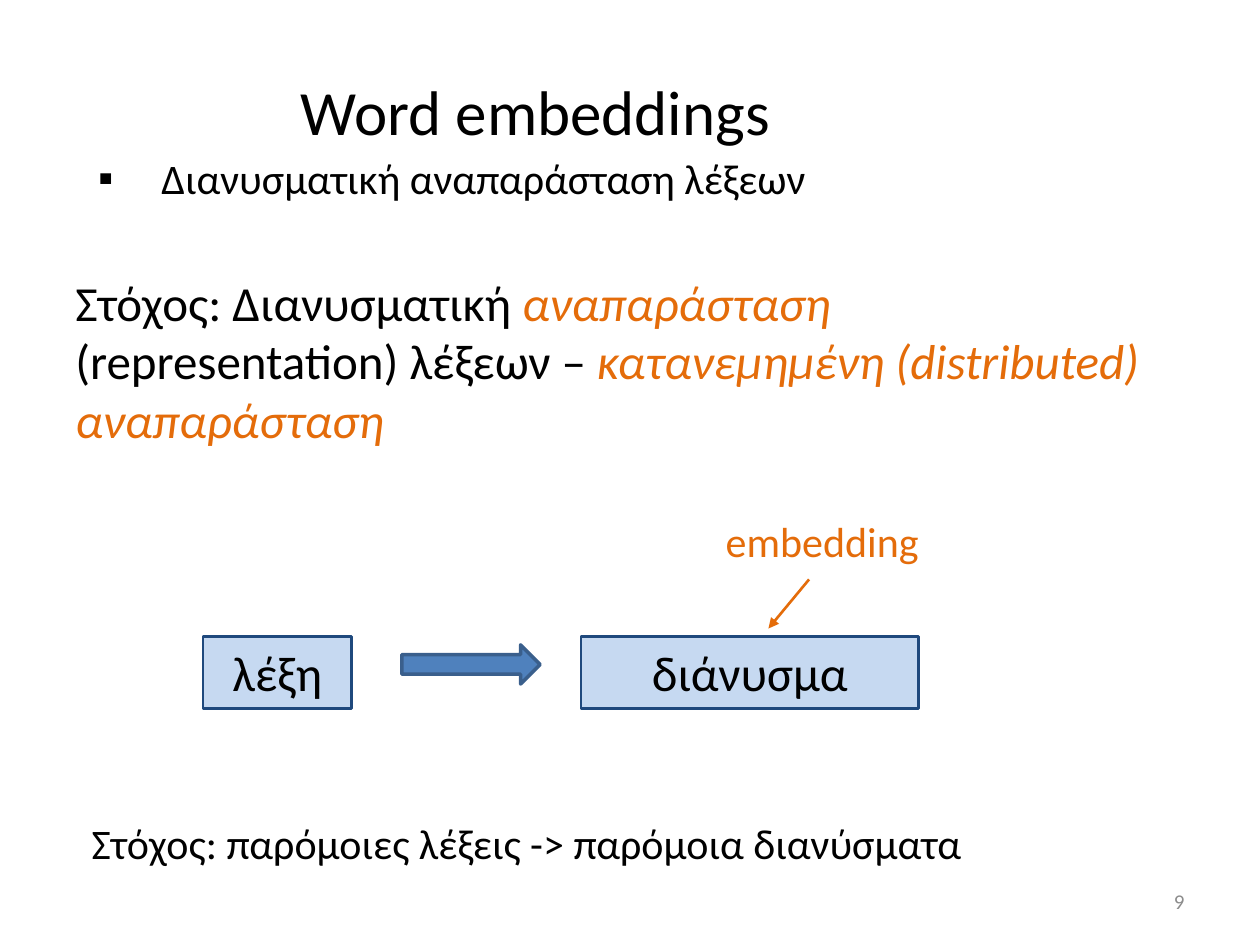
from lxml.etree import SubElement
from pptx import Presentation
from pptx.dml.color import RGBColor
from pptx.enum.shapes import MSO_CONNECTOR as Connector, MSO_SHAPE as Preset
from pptx.enum.text import MSO_ANCHOR as Anchor, MSO_AUTO_SIZE as AutoSize, PP_ALIGN as Align
from pptx.oxml.ns import qn
from pptx.util import Cm, Pt

BLACK = RGBColor(0x00, 0x00, 0x00)
ORANGE = RGBColor(0xE4, 0x6C, 0x0A)
GRAY = RGBColor(0x8C, 0x8C, 0x8C)
PALE_BLUE = RGBColor(0xC6, 0xD9, 0xF1)
NAVY = RGBColor(0x1F, 0x49, 0x7D)
BLUE = RGBColor(0x4F, 0x81, 0xBD)
STEEL = RGBColor(0x3A, 0x5F, 0x8C)


def place(shape, left, top, width, height):
    values = {"left": left, "top": top, "width": width, "height": height}
    for name, value in values.items():
        setattr(shape, name, Cm(value))


def write(shape, spans, size, align=Align.LEFT, anchor=Anchor.TOP):
    frame = shape.text_frame
    frame_format = {"word_wrap": True, "auto_size": AutoSize.NONE, "vertical_anchor": anchor}
    for name, value in frame_format.items():
        setattr(frame, name, value)
    para = frame.paragraphs[0]
    para.alignment = align
    para.space_before = Pt(0)
    for text, color, italic in spans:
        span = para.add_run()
        span.text = text
        span.font.color.rgb = color
        font_format = {"name": "Calibri", "size": Pt(size), "italic": italic}
        for name, value in font_format.items():
            setattr(span.font, name, value)
    return para


def add_text(page, box, spans, size, **layout):
    shape = page.shapes.add_textbox(*map(Cm, box))
    write(shape, spans, size, **layout)


def add_block(page, preset, box, fill, line, line_width):
    shape = page.shapes.add_shape(preset, *map(Cm, box))
    shape.shadow.inherit = False
    shape.fill.solid()
    shape.fill.fore_color.rgb = fill
    shape.line.color.rgb = line
    shape.line.width = Pt(line_width)
    return shape


def add_pointer(page, start, end):
    pointer = page.shapes.add_connector(Connector.STRAIGHT, *map(Cm, start + end))
    pointer.line.color.rgb = ORANGE
    pointer.line.width = Pt(1.5)
    SubElement(pointer.line._get_or_add_ln(), qn("a:tailEnd"), type="triangle")
    SubElement(pointer._element.spPr, qn("a:effectLst"))


def fill_title(page, box):
    title = page.shapes.title
    place(title, *box)
    write(title, [("Word embeddings", BLACK, False)], 36, Align.CENTER, Anchor.MIDDLE)


def fill_topic(page, box):
    body = page.placeholders[1]
    place(body, *box)
    topic = [("Διανυσματική αναπαράσταση λέξεων", BLACK, False)]
    properties = write(body, topic, 24, anchor=Anchor.BOTTOM)._p.get_or_add_pPr()
    indent = Cm(1.27)
    properties.set("marL", str(indent))
    properties.set("indent", str(-indent))
    SubElement(properties, qn("a:buFont"), typeface="Wingdings")
    SubElement(properties, qn("a:buChar"), char="▪")
    properties.find(qn("a:buFont")).set("typeface", "Calibri")


def add_diagram(page, left, top):
    block_top, block_height = top + 2.57, 1.45
    for text, offset, width in [("λέξη", 0, 3), ("διάνυσμα", 7.62, 6.81)]:
        box = (left + offset, block_top, width, block_height)
        block = add_block(page, Preset.RECTANGLE, box, PALE_BLUE, NAVY, 1.5)
        write(block, [(text, BLACK, False)], 28, Align.CENTER)
    add_block(page, Preset.RIGHT_ARROW, (left + 4.01, top + 2.74, 2.79, 0.79), BLUE, STEEL, 2)
    add_text(page, (left + 10.29, top, 7.19, 1.27), [("embedding", ORANGE, False)], 24)
    add_pointer(page, (left + 12.22, top + 1.42), (left + 11.4, top + 2.41))


def main():
    deck = Presentation()
    deck.slide_width, deck.slide_height = Cm(25.4), Cm(19.05)
    page = deck.slides.add_slide(deck.slide_layouts[1])
    add_text(page, (18.21, 17.65, 5.92, 1.02), [("9", GRAY, False)], 12,
             align=Align.RIGHT, anchor=Anchor.MIDDLE)
    fill_topic(page, (1.73, 1.73, 20.6, 2.49))
    fill_title(page, (4.09, 1.32, 13.41, 1.8))
    goal = [
        ("Στόχος: Διανυσματική ", BLACK, False),
        ("αναπαράσταση ", ORANGE, True),
        ("(representation) λέξεων – ", BLACK, False),
        ("κατανεμημένη (distributed) αναπαράσταση", ORANGE, True),
    ]
    add_text(page, (1.27, 5.36, 22.4, 3.84), goal, 28)
    add_diagram(page, 4.09, 10.26)
    closing = [("Στόχος: παρόμοιες λέξεις -> παρόμοια διανύσματα", BLACK, False)]
    add_text(page, (1.6, 16.36, 20.6, 1.27), closing, 24)
    deck.save("out.pptx")


if __name__ == "__main__":
    main()
